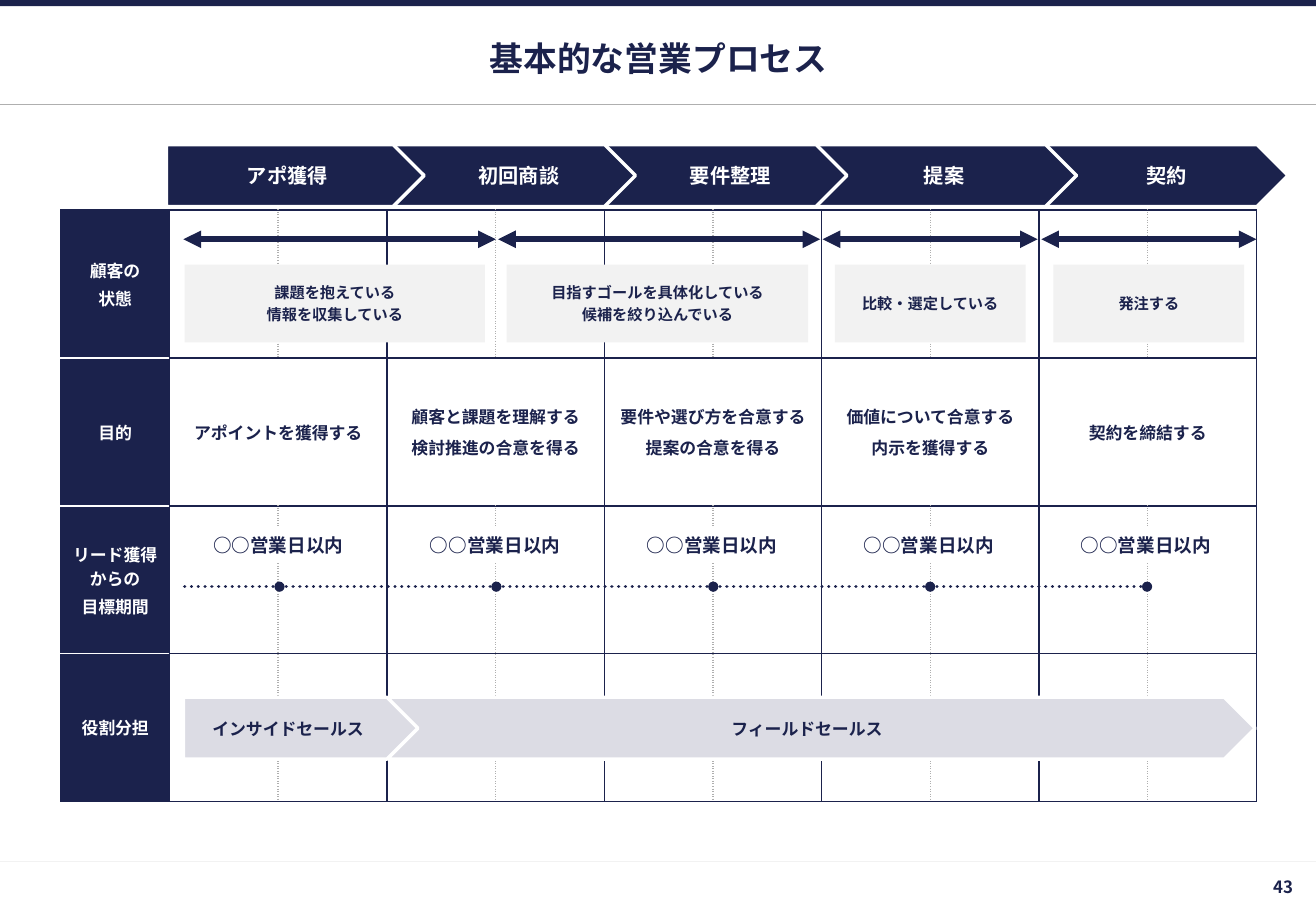
from lxml import etree
from pptx import Presentation
from pptx.dml.color import RGBColor
from pptx.enum import dml, shapes, text
from pptx.oxml import ns
from pptx.util import Inches, Pt

NAVY = RGBColor(0x1B, 0x22, 0x4C)
WHITE = RGBColor(0xFF, 0xFF, 0xFF)
PALE = RGBColor(0xF2, 0xF2, 0xF2)
GREY = RGBColor(0xAF, 0xAF, 0xAF)
LILAC = RGBColor(0xDC, 0xDC, 0xE4)
FONT = "Noto Sans CJK JP"
KIND = shapes.MSO_SHAPE
DOT = dml.MSO_LINE.ROUND_DOT
MID = text.MSO_ANCHOR.MIDDLE


def write(frame, words, size=10, color=NAVY, align=text.PP_ALIGN.CENTER,
          after=0, lead=None, pad=(0.04, 0.04, 0.04, 0.04), wrap=True):
    frame.word_wrap = wrap
    frame.vertical_anchor = MID
    frame.margin_left, frame.margin_top, frame.margin_right, frame.margin_bottom = map(Inches, pad)
    for i, row in enumerate(words.split("\n")):
        para = frame.paragraphs[0] if i == 0 else frame.add_paragraph()
        para.alignment = align
        para.space_after = Pt(after)
        para.line_spacing = lead
        run = para.add_run()
        run.text = row
        run.font.size = Pt(size)
        run.font.bold = True
        run.font.name = FONT
        run.font.color.rgb = color
        etree.SubElement(run._r.get_or_add_rPr(), ns.qn("a:ea"), typeface=FONT)


def link(x1, x2, y, color, width, dash=None, head=None, tail=None):
    line = slide.shapes.add_connector(
        shapes.MSO_CONNECTOR.STRAIGHT, Inches(x1), Inches(y), Inches(x2), Inches(y))
    line.line.color.rgb = color
    line.line.width = Pt(width)
    ln = line.line._get_or_add_ln()
    if dash:
        line.line.dash_style = dash
        ln.set("cap", "rnd")
    for tag, end in (("a:headEnd", head), ("a:tailEnd", tail)):
        if end:
            etree.SubElement(ln, ns.qn(tag), type=end)
    etree.SubElement(line._element.spPr, ns.qn("a:effectLst"))


deck = Presentation()
deck.slide_width, deck.slide_height = Inches(10.83), Inches(7.5)
slide = deck.slides.add_slide(deck.slide_layouts[6])

# Page rules
link(0, 10.83, 7.09, PALE, 0.75)
link(0, 10.83, 0.86, GREY, 0.75)

# Process table
labels = ["顧客の\n状態", "目的", "リード獲得からの\n目標期間", "役割分担"]
goals = ["アポイントを獲得する", "顧客と課題を理解する\n検討推進の合意を得る",
         "要件や選び方を合意する\n提案の合意を得る", "価値について合意する\n内示を獲得する",
         "契約を締結する"]
frame = slide.shapes.add_table(4, 11, Inches(0.5), Inches(1.73), Inches(9.84), Inches(4.87))
grid = frame.table
grid.first_row = grid.horz_banding = False
for col in grid.columns:
    col.width = Inches(9.84 / 11)
for r in range(4):
    grid.rows[r].height = Inches(4.87 / 4)
    for c in range(11):
        cell = grid.cell(r, c)
        cell.vertical_anchor = MID
        cell.margin_left = cell.margin_right = Inches(0.04)
        cell.margin_top = cell.margin_bottom = Inches(0.04)
        if c == 0:
            cell.fill.solid()
            cell.fill.fore_color.rgb = NAVY
            write(cell.text_frame, labels[r], color=WHITE, after=2)
        else:
            cell.fill.background()
        # Stage edges are solid, stage middles dotted
        edges = {
            "L": GREY if c and c % 2 == 0 and r != 1 else NAVY,
            "R": GREY if c % 2 and r != 1 else NAVY,
            "T": WHITE if c == 0 and r > 0 else NAVY,
            "B": WHITE if c == 0 and r < 3 else NAVY,
        }
        for i, (side, color) in enumerate(edges.items()):
            ln = etree.Element(ns.qn("a:ln" + side), w=str(Pt(1)))
            fill = etree.SubElement(ln, ns.qn("a:solidFill"))
            etree.SubElement(fill, ns.qn("a:srgbClr"), val=str(color))
            etree.SubElement(ln, ns.qn("a:prstDash"), val="sysDot" if color == GREY else "solid")
            cell._tc.get_or_add_tcPr().insert(i, ln)
for i, goal in enumerate(goals):
    cell = grid.cell(1, 2 * i + 1)
    cell.merge(grid.cell(1, 2 * i + 2))
    write(cell.text_frame, goal, after=4)

# Filled shapes: top bar, stage arrows, role arrows, customer states
blocks = [
    (KIND.RECTANGLE, 0, 0, 10.83, 0.05, NAVY, ""),
    (KIND.CHEVRON, 8.34, 1.19, 2.26, 0.51, NAVY, ""),
    (KIND.CHEVRON, 6.6, 1.19, 2.26, 0.51, NAVY, ""),
    (KIND.CHEVRON, 4.88, 1.19, 2.09, 0.51, NAVY, ""),
    (KIND.PENTAGON, 3.11, 1.19, 2.12, 0.51, NAVY, ""),
    (KIND.PENTAGON, 1.37, 1.19, 2.12, 0.51, NAVY, ""),
    (KIND.PENTAGON, 3.21, 5.74, 7.12, 0.51, LILAC, ""),
    (KIND.PENTAGON, 1.51, 5.74, 1.93, 0.51, LILAC, ""),
    (KIND.RECTANGLE, 1.52, 2.18, 2.47, 0.64, PALE, "課題を抱えている\n情報を収集している"),
    (KIND.RECTANGLE, 4.17, 2.18, 2.48, 0.64, PALE, "目指すゴールを具体化している\n候補を絞り込んでいる"),
    (KIND.RECTANGLE, 6.87, 2.18, 1.57, 0.64, PALE, "比較・選定している"),
    (KIND.RECTANGLE, 8.67, 2.18, 1.57, 0.64, PALE, "発注する"),
]
for kind, x, y, w, h, color, words in blocks:
    block = slide.shapes.add_shape(kind, Inches(x), Inches(y), Inches(w), Inches(h))
    block.shadow.inherit = False
    block.fill.solid()
    block.fill.fore_color.rgb = color
    if kind == KIND.RECTANGLE:
        block.line.fill.background()
    else:
        block.line.color.rgb = WHITE
        block.line.width = Pt(2)
    if words:
        write(block.text_frame, words, size=9, after=2)

# Title, stage names, role names and page number
thin = dict(lead=0.9, pad=(0.03, 0.03, 0.03, 0))
stage = dict(thin, size=12, color=WHITE)
notes = [
    ("基本的な営業プロセス", 0.5, 0.26, 9.84, 0.43, dict(size=20)),
    ("アポ獲得", 1.43, 1.25, 1.87, 0.39, stage),
    ("初回商談", 3.53, 1.25, 1.48, 0.39, stage),
    ("要件整理", 5.27, 1.25, 1.48, 0.39, stage),
    ("提案", 7.03, 1.25, 1.48, 0.39, stage),
    ("契約", 8.86, 1.25, 1.48, 0.39, stage),
    ("フィールドセールス", 3.22, 5.8, 6.84, 0.39, thin),
    ("インサイドセールス", 1.52, 5.8, 1.7, 0.39, thin),
    ("43", 8.9, 7.1, 1.94, 0.4,
     dict(align=text.PP_ALIGN.RIGHT, pad=(0.04, 0.04, 0.2, 0.04))),
]
for words, x, y, w, h, style in notes:
    box = slide.shapes.add_textbox(Inches(x), Inches(y), Inches(w), Inches(h))
    write(box.text_frame, words, **style)

# Customer state spans
for x1, x2 in [(1.51, 4.08), (4.1, 6.75), (6.77, 8.54), (8.57, 10.34)]:
    link(x1, x2, 1.97, NAVY, 3.5, head="triangle", tail="triangle")

# Target timeline
last = 1.52
for i in range(5):
    stop = 2.3 + 1.785 * i
    link(last, stop, 4.83, NAVY, 2, dash=DOT, tail="oval")
    last = stop
    box = slide.shapes.add_textbox(Inches(stop - 0.65), Inches(4.34), Inches(1.28), Inches(0.29))
    box.fill.solid()
    box.fill.fore_color.rgb = WHITE
    write(box.text_frame, "○○営業日以内", size=11, pad=(0.1, 0.05, 0.1, 0.05), wrap=False)

deck.save("out.pptx")
